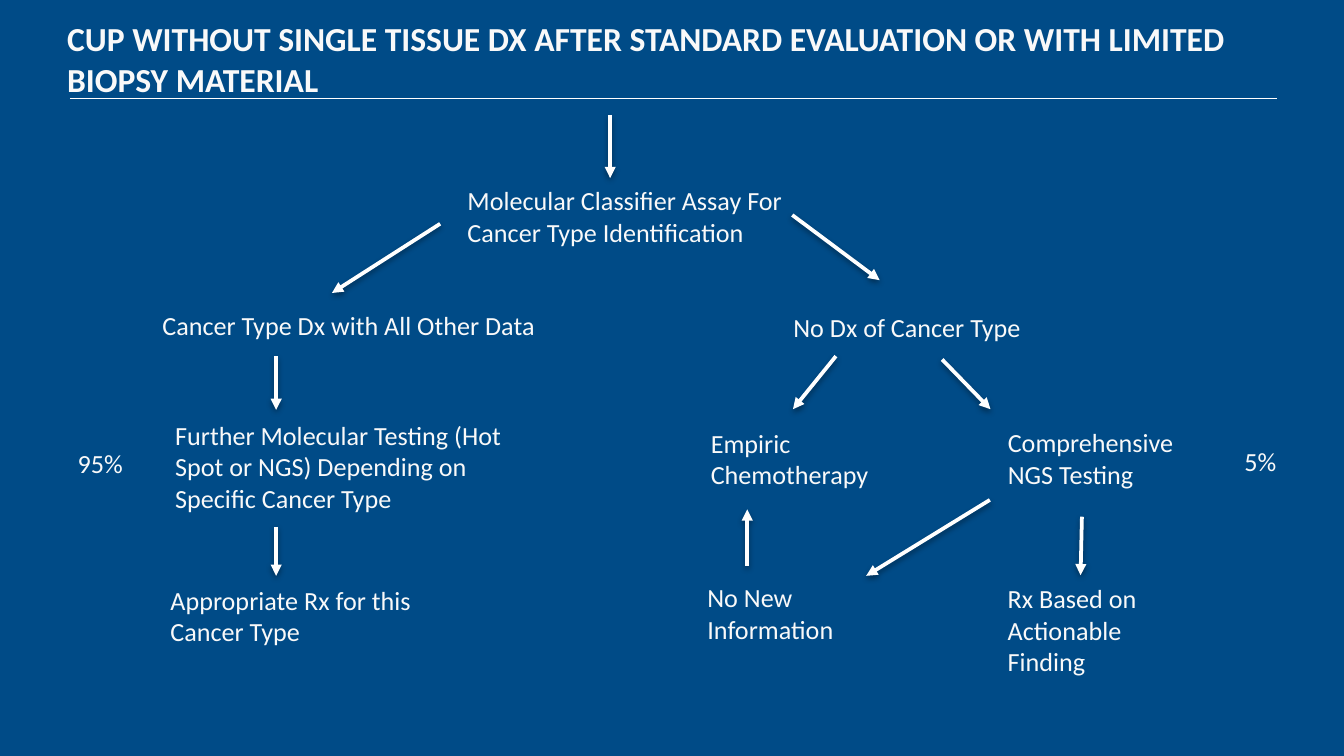
from lxml import etree
from pptx import Presentation
from pptx.dml.color import RGBColor
from pptx.enum.shapes import MSO_CONNECTOR
from pptx.enum.text import MSO_ANCHOR, MSO_AUTO_SIZE
from pptx.oxml import parse_xml
from pptx.oxml.ns import nsdecls, qn
from pptx.util import Emu, Pt

STRAIGHT = MSO_CONNECTOR.STRAIGHT
TOP = MSO_ANCHOR.TOP
GROW = MSO_AUTO_SIZE.SHAPE_TO_FIT_TEXT

NAVY = RGBColor(0x00, 0x4B, 0x87)
WHITE = RGBColor(0xFF, 0xFF, 0xFF)
OFF_WHITE = RGBColor(0xF9, 0xF9, 0xF9)
FONT = "Calibri"
EMU_PER_PX = 4572  # 200 px to the inch

TITLE = ("CUP WITHOUT SINGLE TISSUE DX AFTER STANDARD EVALUATION "
         "OR WITH LIMITED BIOPSY MATERIAL")

# left, top, width, height, text
STEPS = [
    (676, 265, 530, 114, "Molecular Classifier Assay For Cancer Type Identification"),
    (222, 451, 614, 68, "Cancer Type Dx with All Other Data"),
    (241, 614, 578, 162,
     "Further Molecular Testing (Hot Spot or NGS) Depending on Specific Cancer Type"),
    (234, 860, 452, 114, "Appropriate Rx for this Cancer Type"),
    (96, 656, 126, 68, "95%"),
    (1161, 453, 380, 68, "No Dx of Cancer Type"),
    (1038, 626, 370, 94, "Empiric Chemotherapy"),
    (1033, 856, 292, 114, "No New Information"),
    (1480, 625, 344, 94, "Comprehensive NGS Testing"),
    (1480, 857, 306, 162, "Rx Based on Actionable Finding"),
    (1832, 653, 108, 56, "5%"),
]

# start x, start y, end x, end y
ARROWS = [
    (655, 333, 494, 436),
    (1179, 320, 1309, 417),
    (908, 171, 908, 265),
    (411, 530, 411, 610),
    (411, 784, 411, 857),
    (1244, 530, 1180, 609),
    (1402, 535, 1474, 609),
    (1610, 769, 1608, 856),
    (1473, 744, 1289, 857),
    (1112, 842, 1112, 758),
]

SHADOW = (
    f'<a:effectLst {nsdecls("a")}>'
    '<a:outerShdw blurRad="40000" dist="20000" dir="5400000" rotWithShape="0">'
    '<a:srgbClr val="000000"><a:alpha val="38000"/></a:srgbClr>'
    '</a:outerShdw></a:effectLst>'
)


def px(value):
    return Emu(value * EMU_PER_PX)


def add_text(slide, box, text, size, bold=False):
    shape = slide.shapes.add_textbox(*map(px, box))
    frame = shape.text_frame
    frame.word_wrap = True
    frame.vertical_anchor = TOP
    run = frame.paragraphs[0].add_run()
    run.text = text
    run.font.name = FONT
    run.font.size = Pt(size)
    run.font.bold = bold
    run.font.color.rgb = OFF_WHITE
    return frame


def add_title(slide):
    frame = add_text(slide, (100, 27, 1800, 80), TITLE, 18, bold=True)
    frame.margin_left = frame.margin_right = 0
    frame.margin_top = frame.margin_bottom = 0


def add_step(slide, box, text):
    add_text(slide, box, text, 14).auto_size = GROW


def add_line(slide, ends, width):
    line = slide.shapes.add_connector(STRAIGHT, *map(px, ends))
    line.line.color.rgb = WHITE
    line.line.width = Pt(width)
    return line


def add_rule(slide):
    rule = add_line(slide, (104, 147, 1900, 147), 0.75)
    etree.SubElement(rule._element.spPr, qn("a:effectLst"))


def add_arrow(slide, ends):
    """Draw a line with a triangular head at its end and a soft shadow below."""
    arrow = add_line(slide, ends, 2)
    properties = arrow._element.spPr
    outline = properties.find(qn("a:ln"))
    etree.SubElement(outline, qn("a:tailEnd"), type="triangle")
    properties.append(parse_xml(SHADOW))


def main():
    presentation = Presentation()
    presentation.slide_width = px(2000)
    presentation.slide_height = px(1125)
    slide = presentation.slides.add_slide(presentation.slide_layouts[6])
    background = slide.background.fill
    background.solid()
    background.fore_color.rgb = NAVY

    add_rule(slide)
    add_title(slide)
    for *box, text in STEPS:
        add_step(slide, box, text)
    for ends in ARROWS:
        add_arrow(slide, ends)
    presentation.save("out.pptx")


if __name__ == "__main__":
    main()
